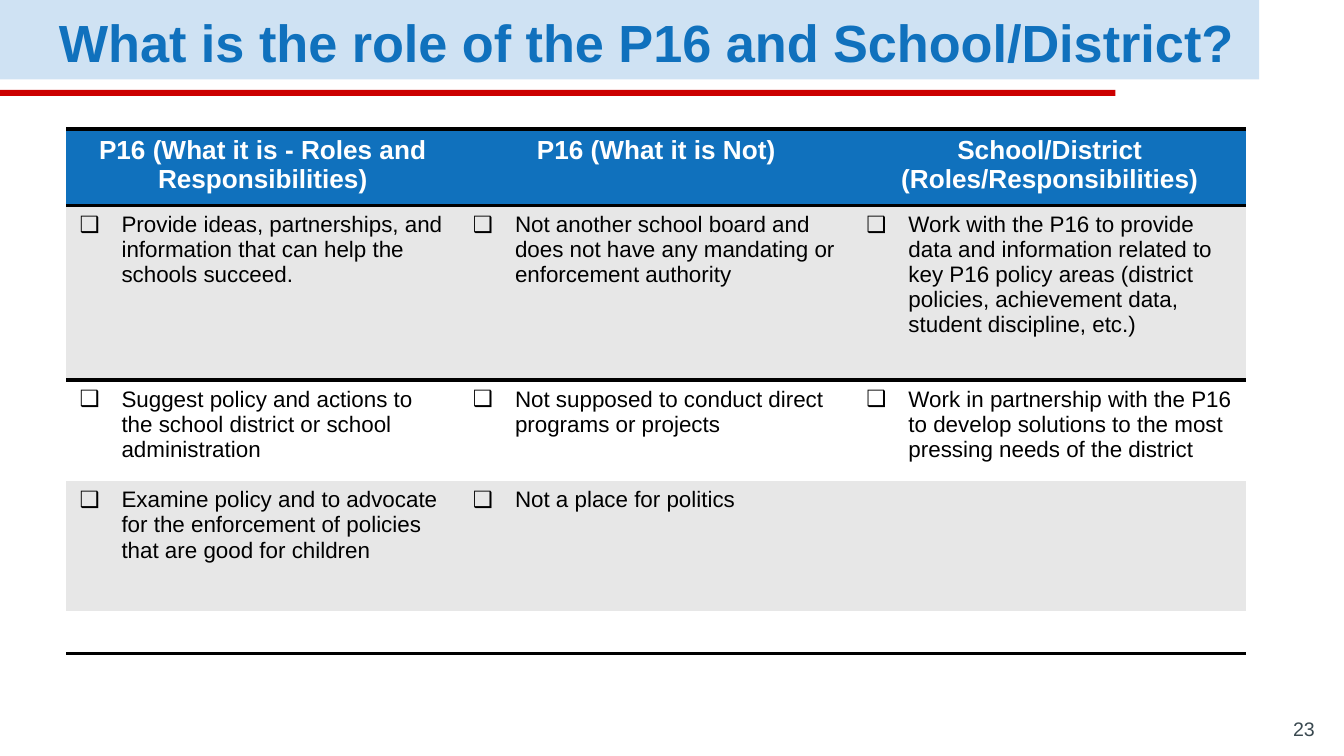
from pptx import Presentation
from pptx.dml.color import RGBColor
from pptx.enum.shapes import MSO_SHAPE as Shape
from pptx.enum.text import MSO_ANCHOR as Anchor, PP_ALIGN as Align
from pptx.oxml.ns import qn
from pptx.util import Pt
from lxml.etree import SubElement

BLUE = "1071BD"


def color(value):
    return RGBColor.from_string(value)


def style(paragraph, size, ink, bold=False):
    font = paragraph.font
    font.name, font.size, font.bold = "Arial", Pt(size), bold
    font.color.rgb = color(ink)


prs = Presentation()
prs.slide_width, prs.slide_height = Pt(720), Pt(405)
slide = prs.slides.add_slide(prs.slide_layouts[6])

for top, width, height, fill in [(0, 674.6, 42.5, "CFE2F3"), (48.2, 597.6, 3.2, "CC0000")]:
    band = slide.shapes.add_shape(Shape.RECTANGLE, 0, Pt(top), Pt(width), Pt(height))
    band.shadow.inherit = False
    band.fill.solid()
    band.fill.fore_color.rgb = color(fill)
    band.line.fill.background()

labels = [
    ("What is the role of the P16 and School/District?", 24.5, 2.2, 650, 35.3,
     28, BLUE, True, Anchor.MIDDLE, Align.LEFT),
    ("23", 668.2, 384.5, 43.2, 18.7, 10.5, "3A4950", False, Anchor.BOTTOM, Align.RIGHT),
]
for text, left, top, width, height, size, ink, bold, anchor, align in labels:
    frame = slide.shapes.add_textbox(Pt(left), Pt(top), Pt(width), Pt(height)).text_frame
    frame.word_wrap = True
    frame.vertical_anchor = anchor
    frame.margin_left = frame.margin_right = Pt(7.2)
    frame.margin_top = frame.margin_bottom = Pt(7.2)
    label = frame.paragraphs[0]
    label.text = text
    label.alignment = align
    if bold:
        label.line_spacing = 1.15
        label.space_after = Pt(16)
    style(label, size, ink, bold)

roles = [
    ["P16 (What it is - Roles and Responsibilities)",
     "P16 (What it is Not)",
     "School/District (Roles/Responsibilities)"],
    ["Provide ideas, partnerships, and information that can help the schools succeed.",
     "Not another school board and does not have any mandating or enforcement authority",
     "Work with the P16 to provide data and information related to key P16 policy areas "
     "(district policies, achievement data, student discipline, etc.)"],
    ["Suggest policy and actions to the school district or school administration",
     "Not supposed to conduct direct programs or projects",
     "Work in partnership with the P16 to develop solutions to the most pressing needs "
     "of the district"],
    ["Examine policy and to advocate for the enforcement of policies that are good for children",
     "Not a place for politics", ""],
    ["", "", ""],
]
row_heights = [39.2, 93.6, 54, 70, 22.6]
row_fills = [BLUE, "E7E7E7", "FFFFFF", "E7E7E7", "FFFFFF"]
row_rules = {0: ["a:lnT", "a:lnB"], 1: ["a:lnT"], 4: ["a:lnB"]}

table = slide.shapes.add_table(5, 3, Pt(35.4), Pt(69.1), Pt(632.4), Pt(sum(row_heights))).table
table.first_row = table.horz_banding = False
table._tbl.tblPr.find(qn("a:tableStyleId")).text = "{2D5ABB26-0587-4C30-8999-92F81FD0307C}"
for column in table.columns:
    column.width = Pt(210.8)

for r, row in enumerate(roles):
    table.rows[r].height = Pt(row_heights[r])
    for c, text in enumerate(row):
        cell = table.cell(r, c)
        for side in row_rules.get(r, []):
            rule = SubElement(cell._tc.get_or_add_tcPr(), qn(side), w=str(Pt(2)))
            ink = SubElement(rule, qn("a:solidFill"))
            SubElement(ink, qn("a:srgbClr"), val="000000")
        cell.fill.solid()
        cell.fill.fore_color.rgb = color(row_fills[r])
        role = cell.text_frame.paragraphs[0]
        if not text:
            role._p.get_or_add_endParaRPr().set("sz", "1200")
            continue
        role.text = text
        if r == 0:
            role.alignment = Align.CENTER
            style(role, 14, "FFFFFF", True)
        else:
            props = role._p.get_or_add_pPr()
            props.set("marL", str(Pt(22.5)))
            props.set("indent", str(-Pt(22.5)))
            SubElement(props, qn("a:buFont"), typeface="Arial")
            SubElement(props, qn("a:buChar"), char="❑")
            style(role, 12, "000000")

prs.save("out.pptx")
